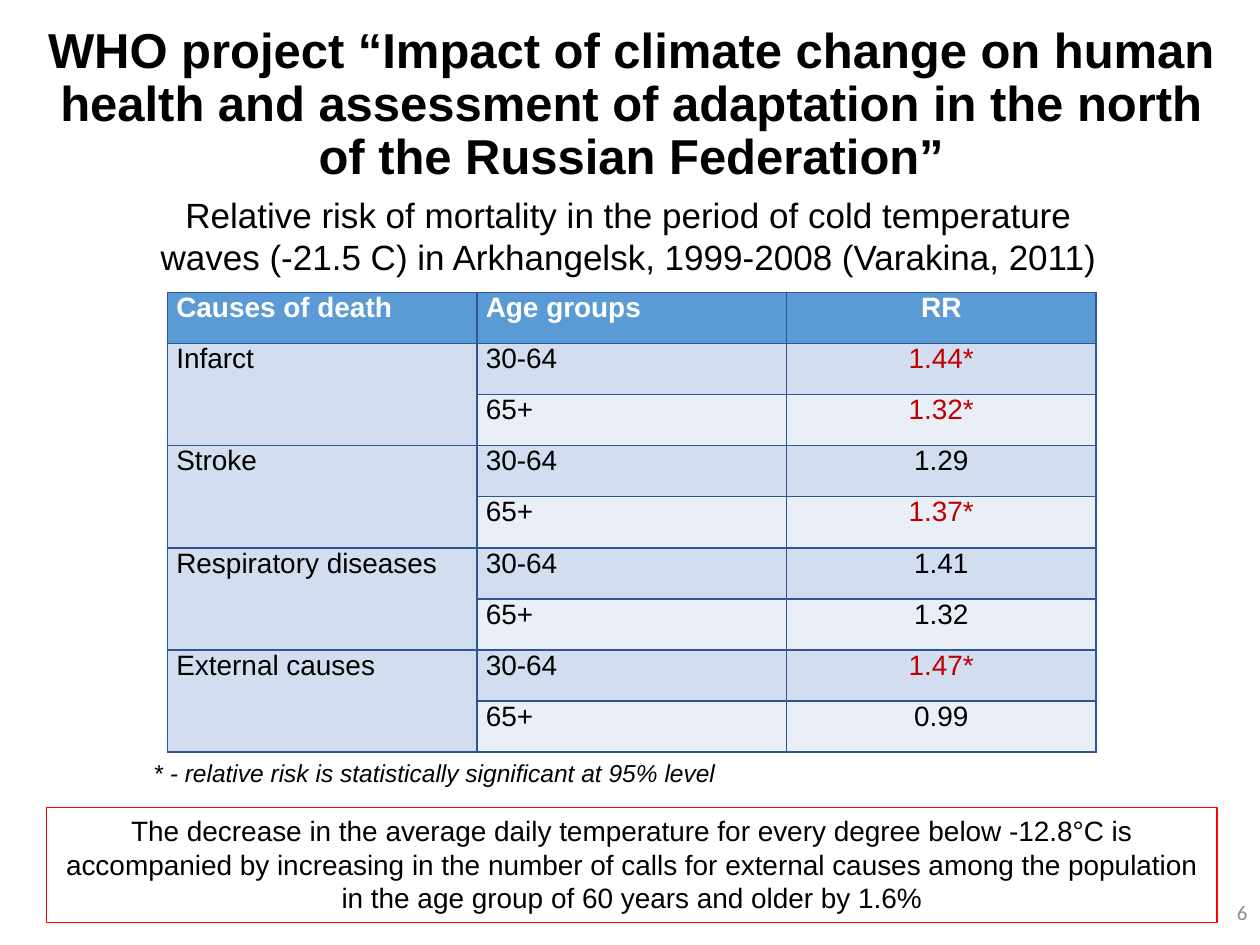
from lxml.etree import SubElement
from pptx import Presentation
from pptx.dml.color import RGBColor
from pptx.enum.shapes import MSO_SHAPE as Shape
from pptx.enum.text import MSO_ANCHOR as Anchor, MSO_AUTO_SIZE as AutoSize, PP_ALIGN as Align
from pptx.oxml.ns import qn
from pptx.util import Inches, Pt

BLACK, WHITE, RED, SIGNIFICANT = "000000", "FFFFFF", "FF0000", "C00000"
HEADER_FILL, BAND_DARK, BAND_LIGHT, BORDER = "5B9BD5", "D2DEEF", "EAEFF7", "2F5597"
HEADERS = ("Causes of death", "Age groups", "RR")
AGE_GROUPS = ("30-64", "65+")
RISKS = {
    "Infarct": ("1.44*", "1.32*"),
    "Stroke": ("1.29", "1.37*"),
    "Respiratory diseases": ("1.41", "1.32"),
    "External causes": ("1.47*", "0.99"),
}


def color(value):
    """Turn a hex string into a colour."""
    return RGBColor.from_string(value)


def write(text_frame, text, size, align=Align.LEFT, ink=BLACK, bold=False, italic=False, font="Arial"):
    """Put one formatted paragraph into a text frame."""
    paragraph = text_frame.paragraphs[0]
    paragraph.text = text
    paragraph.alignment = align
    for run in paragraph.runs:
        run.font.name = font
        run.font.size = Pt(size)
        run.font.bold = bold
        run.font.italic = italic
        run.font.color.rgb = color(ink)
    return paragraph


def add_title(slide, text):
    """Move, fill and format the title placeholder."""
    title = slide.shapes.title
    title.left, title.top = Inches(0.21), Inches(0.2)
    title.width, title.height = Inches(9.6), Inches(1.28)
    title.text_frame.word_wrap = True
    title.text_frame.auto_size = AutoSize.NONE
    title.text_frame.vertical_anchor = Anchor.MIDDLE
    write(title.text_frame, text, 28, Align.CENTER, bold=True).line_spacing = 0.9


def add_text(slide, box, text, size, anchor=Anchor.TOP, **style):
    """Add a wrapping text box."""
    text_box = slide.shapes.add_textbox(*map(Inches, box))
    text_box.text_frame.word_wrap = True
    text_box.text_frame.vertical_anchor = anchor
    write(text_box.text_frame, text, size, **style)


def add_callout(slide, box, text):
    """Add an outlined rectangle with centred text."""
    shape = slide.shapes.add_shape(Shape.RECTANGLE, *map(Inches, box))
    shape.shadow.inherit = False
    shape.fill.background()
    shape.line.color.rgb = color(RED)
    shape.line.width = Pt(0.75)
    shape.text_frame.word_wrap = True
    shape.text_frame.vertical_anchor = Anchor.TOP
    write(shape.text_frame, text, 16, Align.CENTER)


def set_borders(cell):
    """Draw a thin line on all four sides of a cell."""
    properties = cell._tc.get_or_add_tcPr()
    for side in ("a:lnL", "a:lnR", "a:lnT", "a:lnB"):
        line = SubElement(properties, qn(side), w=str(Pt(1)))
        fill = SubElement(line, qn("a:solidFill"))
        SubElement(fill, qn("a:srgbClr"), val=BORDER)


def fill_cell(cell, text, fill, **style):
    """Format a table cell and write its text."""
    set_borders(cell)
    cell.fill.solid()
    cell.fill.fore_color.rgb = color(fill)
    cell.margin_left = cell.margin_right = Inches(0.07)
    cell.margin_top = cell.margin_bottom = 0
    write(cell.text_frame, text, 16, **style)


def add_risk_table(slide):
    """Add the table of relative risks by cause and age group."""
    row_count = 1 + len(RISKS) * len(AGE_GROUPS)
    box = map(Inches, (1.33, 2.32, 7.37, 3.65))
    table = slide.shapes.add_table(row_count, len(HEADERS), *box).table
    aligns = (Align.LEFT, Align.LEFT, Align.CENTER)
    for column, (header, align) in enumerate(zip(HEADERS, aligns)):
        fill_cell(table.cell(0, column), header, HEADER_FILL, align=align, ink=WHITE, bold=True)
    row = 1
    for cause, risks in RISKS.items():
        table.cell(row, 0).merge(table.cell(row + 1, 0))
        for label, age, risk, fill in zip((cause, ""), AGE_GROUPS, risks, (BAND_DARK, BAND_LIGHT)):
            ink = SIGNIFICANT if risk.endswith("*") else BLACK
            fill_cell(table.cell(row, 0), label, BAND_DARK)
            fill_cell(table.cell(row, 1), age, fill)
            fill_cell(table.cell(row, 2), risk, fill, align=Align.CENTER, ink=ink)
            row += 1


def main():
    """Build and save the slide."""
    presentation = Presentation()
    presentation.slide_width, presentation.slide_height = Inches(10), Inches(7.5)
    slide = presentation.slides.add_slide(presentation.slide_layouts[5])
    add_title(slide, "WHO project “Impact of climate change on human health and "
                     "assessment of adaptation in the north of the Russian Federation”")
    add_text(slide, (0.52, 1.49, 8.94, 0.77),
             "Relative risk of mortality in the period of cold temperature\n"
             "waves (-21.5 C) in Arkhangelsk, 1999-2008 (Varakina, 2011)",
             20, align=Align.CENTER)
    add_text(slide, (1.12, 5.97, 6.07, 0.34),
             "* - relative risk is statistically significant at 95% level", 14, italic=True)
    add_callout(slide, (0.37, 6.41, 9.29, 0.91),
                "The decrease in the average daily temperature for every degree below -12.8°C "
                "is accompanied by increasing in the number of calls for external causes among "
                "the population in the age group of 60 years and older by 1.6%")
    add_risk_table(slide)
    add_text(slide, (7.75, 7.04, 2.25, 0.4), "6", 12, Anchor.MIDDLE,
             align=Align.RIGHT, ink="8C8C8C", font="Calibri")
    presentation.save("out.pptx")


if __name__ == "__main__":
    main()
